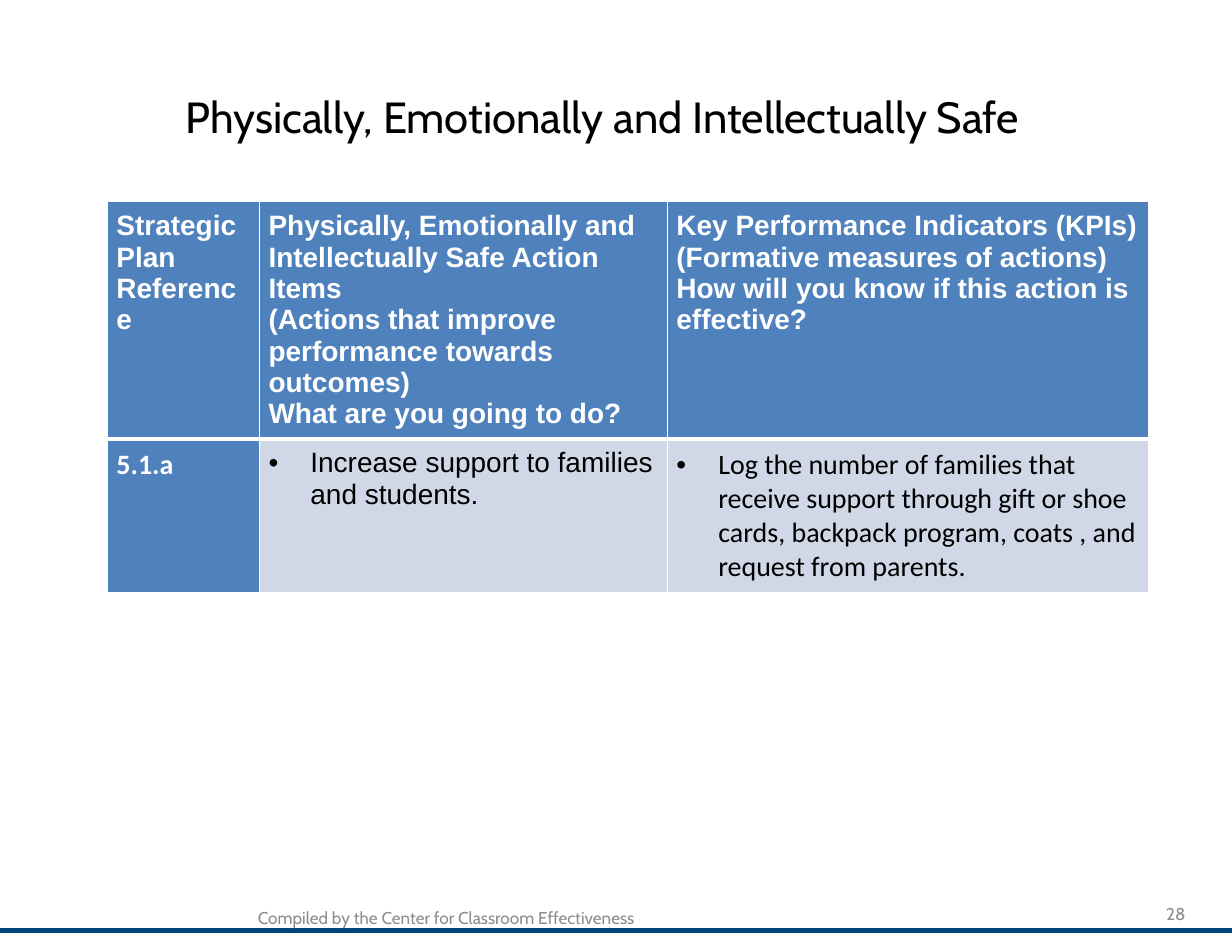
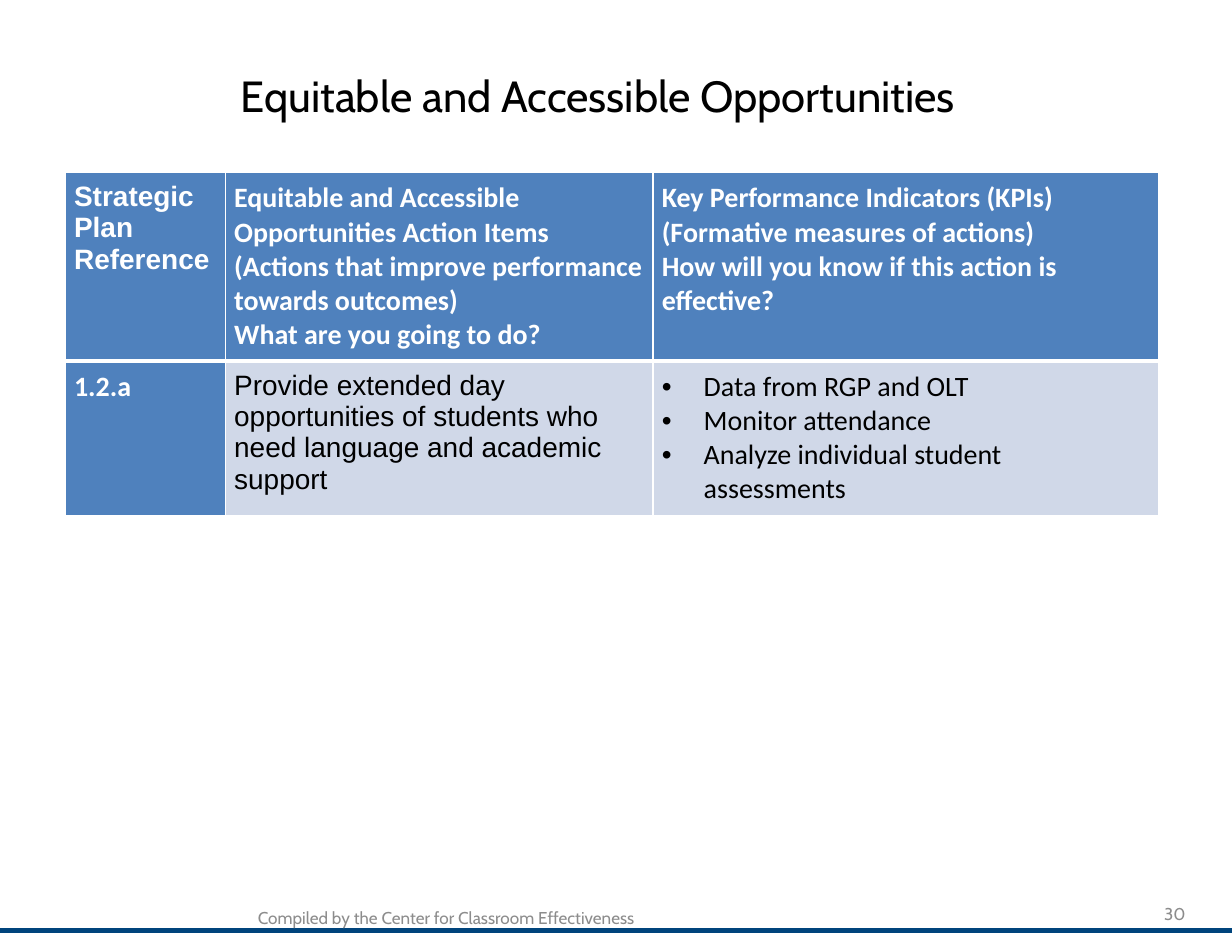
from lxml.etree import SubElement
from pptx import Presentation
from pptx.dml.color import RGBColor
from pptx.enum.shapes import MSO_CONNECTOR
from pptx.enum.text import MSO_ANCHOR, MSO_AUTO_SIZE, PP_ALIGN
from pptx.oxml.ns import qn
from pptx.util import Cm, Pt

COLORS = {
    "navy": "00447C",
    "gray": "8C8C8C",
    "blue": "4F81BD",
    "pale": "D0D8E8",
    "white": "FFFFFF",
    "black": "000000",
}
WIDTH, HEIGHT = 27.94, 21.59
FOOTER = "Compiled by the Center for Classroom Effectiveness"
REFERENCE_HEADING = ["Strategic Plan Reference"]
KPI_HEADING = [
    "Key Performance Indicators (KPIs)",
    "(Formative measures of actions)",
    "How will you know if this action is effective?",
]


def rgb(name):
    return RGBColor.from_string(COLORS[name])


def add_text(paragraph, text, font, size, color, bold=False):
    for index, line in enumerate(text.split("\n")):
        if index:
            paragraph.add_line_break()
        run = paragraph.add_run()
        run.text = line
        run.font.name = font
        run.font.size = Pt(size)
        run.font.bold = bold
        run.font.color.rgb = rgb(color)


def set_frame(frame, horizontal, vertical, anchor):
    frame.margin_left = frame.margin_right = Cm(horizontal)
    frame.margin_top = frame.margin_bottom = Cm(vertical)
    frame.vertical_anchor = anchor
    frame.word_wrap = True
    frame.auto_size = MSO_AUTO_SIZE.NONE


def add_title(slide, text, left, top, width):
    title = slide.shapes.title
    title.left, title.top = Cm(left), Cm(top)
    title.width, title.height = Cm(width), Cm(1.45)
    set_frame(title.text_frame, 0.25, 0.13, MSO_ANCHOR.TOP)
    paragraph = title.text_frame.paragraphs[0]
    paragraph.alignment = PP_ALIGN.LEFT
    add_text(paragraph, text, "Cabin", 28, "black")


def add_small_text(slide, text, box, vertical, anchor, alignment):
    shape = slide.shapes.add_textbox(*[Cm(length) for length in box])
    set_frame(shape.text_frame, 0.28, vertical, anchor)
    paragraph = shape.text_frame.paragraphs[0]
    paragraph.alignment = alignment
    add_text(paragraph, text, "Cabin", 11, "gray")


def add_footer(slide, number):
    line = slide.shapes.add_connector(
        MSO_CONNECTOR.STRAIGHT, 0, Cm(21.11), Cm(WIDTH), Cm(21.11))
    line.line.color.rgb = rgb("navy")
    line.line.width = Pt(3)
    SubElement(line._element.spPr, qn("a:effectLst"))
    add_small_text(slide, FOOTER, (5.57, 20.52, 10.06, 1.02), 0.05,
                   MSO_ANCHOR.TOP, PP_ALIGN.LEFT)
    add_small_text(slide, str(number), (24.22, 20.15, 2.95, 1.14), 0.15,
                   MSO_ANCHOR.MIDDLE, PP_ALIGN.RIGHT)


def add_borders(cell, top, bottom):
    properties = cell._tc.get_or_add_tcPr()
    for tag, points in (("lnL", 1), ("lnR", 1), ("lnT", top), ("lnB", bottom)):
        border = SubElement(properties, qn(f"a:{tag}"), w=str(Pt(points)))
        fill = SubElement(border, qn("a:solidFill"))
        SubElement(fill, qn("a:srgbClr"), val=COLORS["white"])


def add_bullet(paragraph):
    properties = paragraph._p.get_or_add_pPr()
    properties.set("marL", str(Cm(0.95)))
    properties.set("indent", str(-Cm(0.95)))
    SubElement(properties, qn("a:buFont"), typeface="Arial")
    SubElement(properties, qn("a:buChar"), char="•")


def fill_cell(cell, lines, font, heading, bulleted=False):
    cell.margin_left = cell.margin_right = Cm(0.2)
    cell.margin_top = cell.margin_bottom = Cm(0.2)
    cell.fill.solid()
    cell.fill.fore_color.rgb = rgb("blue" if heading else "pale")
    for index, line in enumerate(lines):
        frame = cell.text_frame
        paragraph = frame.add_paragraph() if index else frame.paragraphs[0]
        if bulleted:
            add_bullet(paragraph)
        add_text(paragraph, line, font, 18, "white" if heading else "black", heading)


def add_plan_table(slide, left, top, columns, rows, heading_font, action_heading,
                   reference, actions, indicators, bulleted_actions):
    table = slide.shapes.add_table(
        len(rows), len(columns), Cm(left), Cm(top),
        Cm(sum(columns)), Cm(sum(rows))).table
    table.horz_banding = False
    for column, width in zip(table.columns, columns):
        column.width = Cm(width)
    for index, height in enumerate(rows):
        table.rows[index].height = Cm(height)
        for cell in table.rows[index].cells:
            add_borders(cell, 3 if index else 1, 1 if index else 3)
    fill_cell(table.cell(0, 0), REFERENCE_HEADING, "Arial", True)
    fill_cell(table.cell(0, 1), action_heading, heading_font, True)
    fill_cell(table.cell(0, 2), KPI_HEADING, heading_font, True)
    fill_cell(table.cell(1, 0), [reference], "Calibri", True)
    fill_cell(table.cell(1, 1), actions, "Arial", False, bulleted_actions)
    fill_cell(table.cell(1, 2), indicators, "Calibri", False, True)


def add_plan_slide(presentation, number):
    slide = presentation.slides.add_slide(presentation.slide_layouts[5])
    add_footer(slide, number)
    return slide


def main():
    presentation = Presentation()
    presentation.slide_width = Cm(WIDTH)
    presentation.slide_height = Cm(HEIGHT)

    safe = add_plan_slide(presentation, 28)
    add_plan_table(
        safe, 2.44, 4.57, (3.45, 9.25, 10.9), (3.81, 3.12), "Arial",
        ["Physically, Emotionally and Intellectually Safe Action Items",
         "(Actions that improve performance towards outcomes)",
         "What are you going to do?"],
        "5.1.a",
        ["Increase support to families and students."],
        ["Log the number of families that receive support through gift or shoe "
         "cards, backpack program, coats , and request from parents."],
        True)
    add_title(safe, "Physically, Emotionally and Intellectually Safe", 3.96, 1.9, 22.3)

    equitable = add_plan_slide(presentation, 30)
    add_plan_table(
        equitable, 1.48, 3.91, (3.63, 9.7, 11.46), (4.24, 2.95), "Calibri",
        ["Equitable and Accessible Opportunities Action Items\n"
         "(Actions that improve performance towards outcomes)",
         "What are you going to do?"],
        "1.2.a",
        ["Provide extended day opportunities of students who need language "
         "and academic support"],
        ["Data from RGP and OLT", "Monitor attendance",
         "Analyze individual student assessments"],
        False)
    add_title(equitable, "Equitable and Accessible Opportunities", 5.21, 1.43, 18.39)

    presentation.save("out.pptx")


if __name__ == "__main__":
    main()
